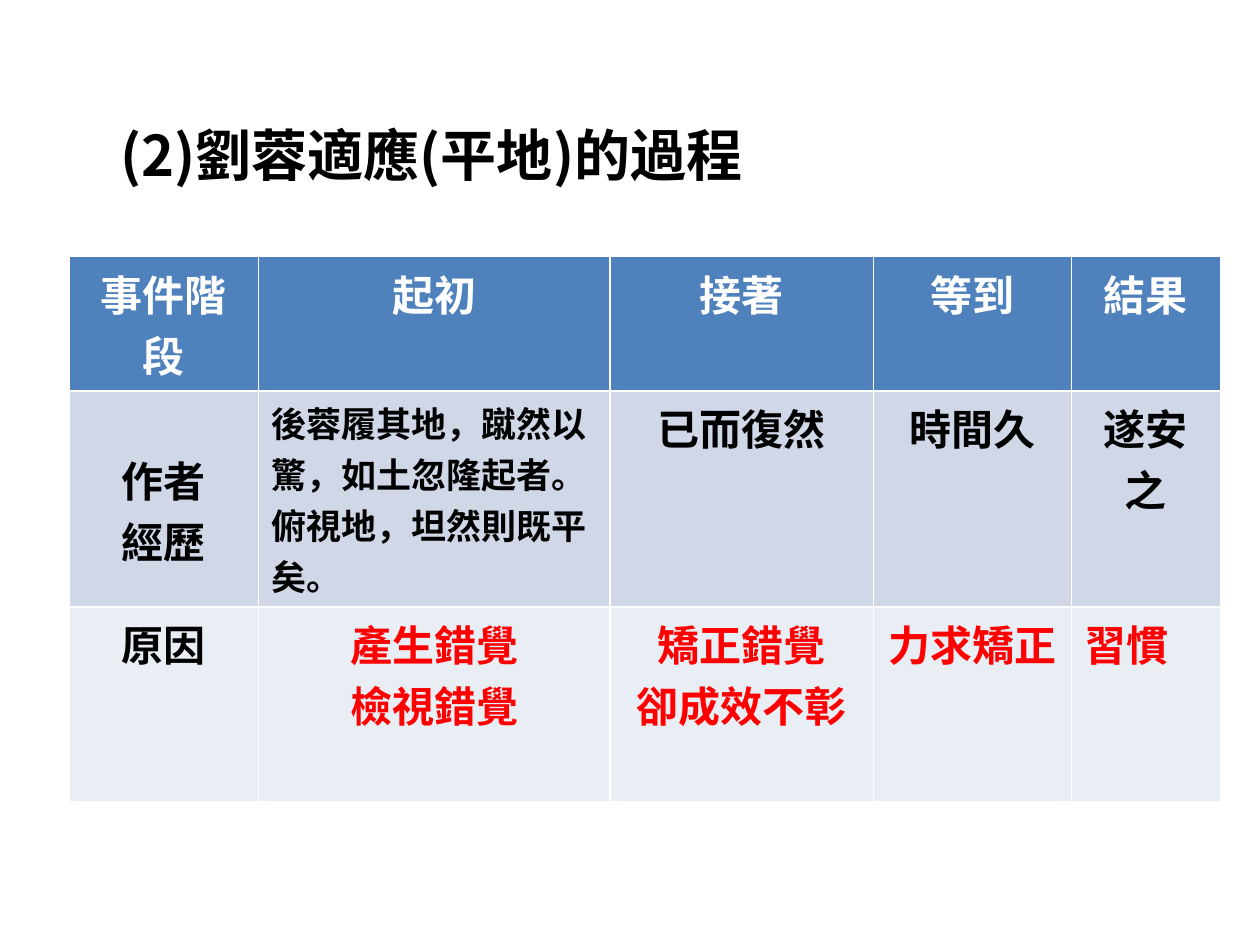
import pptx
import pptx.dml.color
import pptx.enum.text
import pptx.oxml.ns
import pptx.util
from lxml import etree

Cm = pptx.util.Cm
RGBColor = pptx.dml.color.RGBColor
ALIGN = pptx.enum.text.PP_ALIGN

BLACK = RGBColor(0x00, 0x00, 0x00)
WHITE = RGBColor(0xFF, 0xFF, 0xFF)
RED = RGBColor(0xFF, 0x00, 0x00)
ROW_FILLS = [
    RGBColor(0x4F, 0x81, 0xBD),
    RGBColor(0xD0, 0xD8, 0xE8),
    RGBColor(0xE9, 0xED, 0xF4),
]

CJK_FONT = "Noto Sans CJK SC"
HEAD_FONT = "Arial"

COLUMN_WIDTHS = [3.81, 7.09, 5.31, 3.99, 3.0]
ROW_HEIGHTS = [2.69, 4.34, 3.94]

# Each cell holds a list of paragraphs
STAGES = [
    [["事件階段"], ["起初"], ["接著"], ["等到"], ["結果"]],
    [
        ["作者", "經歷"],
        ["後蓉履其地，蹴然以驚，如土忽隆起者。", "俯視地，坦然則既平矣。"],
        ["已而復然"], ["時間久"], ["遂安之"],
    ],
    [
        ["原因"], ["產生錯覺", "檢視錯覺"], ["矯正錯覺", "卻成效不彰"],
        ["力求矯正"], ["習慣"],
    ],
]


def write_text(frame, lines, size=24, color=BLACK, font=CJK_FONT,
               align=ALIGN.CENTER):
    """Fill a text frame with bold paragraphs of one format."""
    for index, line in enumerate(lines):
        para = frame.paragraphs[0] if index == 0 else frame.add_paragraph()
        para.alignment = align
        span = para.add_run()
        span.text = line
        span.font.size = pptx.util.Pt(size)
        span.font.bold = True
        span.font.color.rgb = color
        span.font.name = font
        east_asian = etree.Element(pptx.oxml.ns.qn("a:ea"), typeface=CJK_FONT)
        span.font._element.find(pptx.oxml.ns.qn("a:latin")).addnext(east_asian)


def add_heading(page, text):
    box = page.shapes.title
    box.left, box.top, box.width, box.height = Cm(1.4), Cm(2.3), Cm(22.86), Cm(2)
    frame = box.text_frame
    frame.auto_size = pptx.enum.text.MSO_AUTO_SIZE.NONE
    frame.vertical_anchor = pptx.enum.text.MSO_ANCHOR.TOP
    frame.margin_left = Cm(1.02)
    write_text(frame, [text], size=32, align=ALIGN.LEFT)


def cell_format(row, column):
    """Choose the text format from the cell's place in the table."""
    if row == 0:
        return {"color": WHITE, "font": HEAD_FONT}
    if column == 0:
        return {"font": HEAD_FONT}
    if row == 1:
        return {"size": 20, "align": ALIGN.LEFT} if column == 1 else {}
    last = column == len(COLUMN_WIDTHS) - 1
    return {"color": RED, "align": ALIGN.LEFT if last else ALIGN.CENTER}


def add_stage_table(page):
    table = page.shapes.add_table(
        len(ROW_HEIGHTS), len(COLUMN_WIDTHS), Cm(1.4), Cm(5.17),
        Cm(sum(COLUMN_WIDTHS)), Cm(sum(ROW_HEIGHTS))).table
    for column, width in zip(table.columns, COLUMN_WIDTHS):
        column.width = Cm(width)
    for row, height in zip(table.rows, ROW_HEIGHTS):
        row.height = Cm(height)

    for r, stage in enumerate(STAGES):
        for c, lines in enumerate(stage):
            cell = table.cell(r, c)
            cell.fill.solid()
            cell.fill.fore_color.rgb = ROW_FILLS[r]
            write_text(cell.text_frame, lines, **cell_format(r, c))

    # The author label starts one line lower than its neighbours
    table.cell(1, 0).margin_top = Cm(1.16)


def main():
    deck = pptx.Presentation()
    deck.slide_width, deck.slide_height = Cm(25.4), Cm(19.05)
    page = deck.slides.add_slide(deck.slide_layouts.get_by_name("Title Only"))
    add_heading(page, "(2)劉蓉適應(平地)的過程")
    add_stage_table(page)
    deck.save("out.pptx")


if __name__ == "__main__":
    main()
